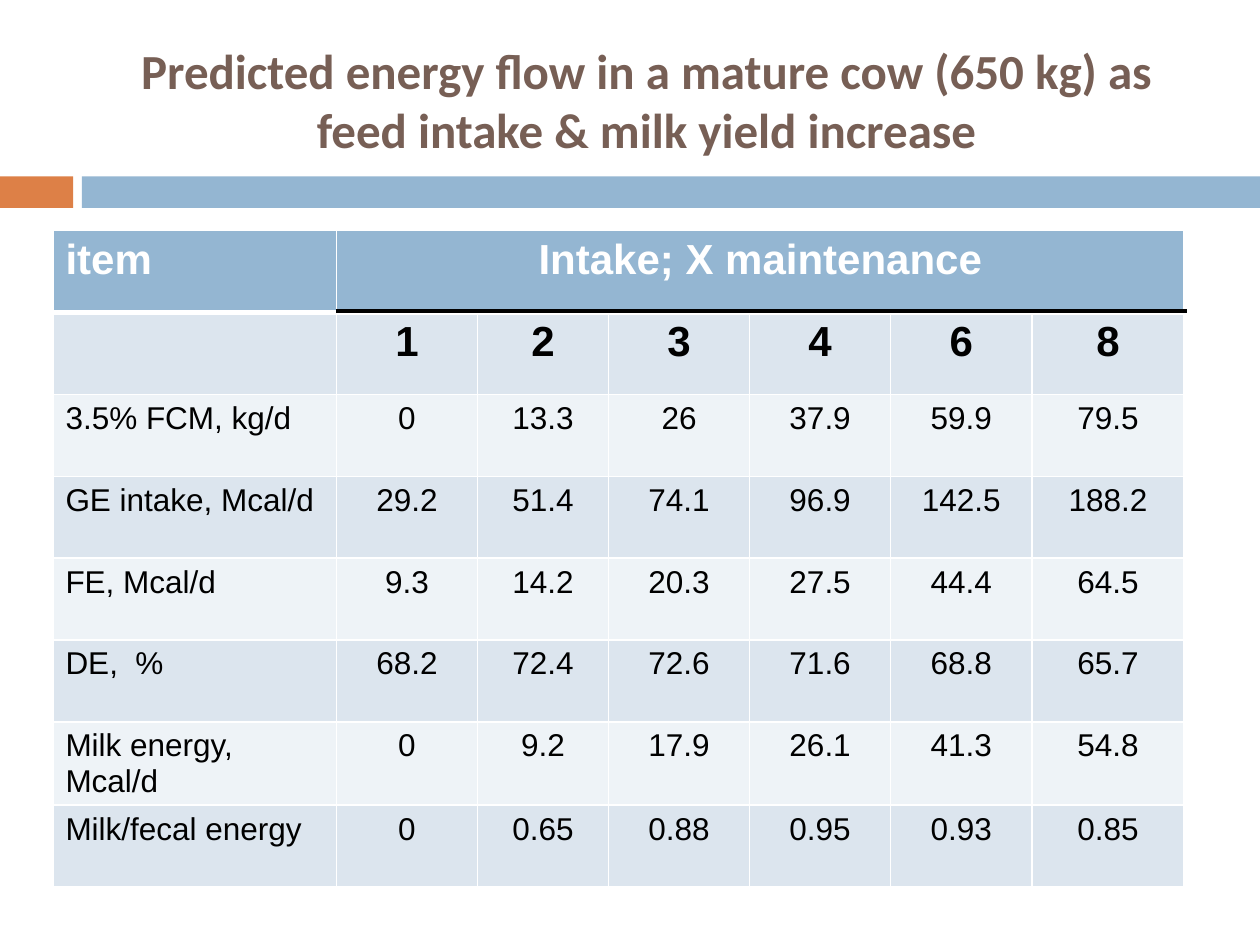
from lxml.etree import SubElement
from pptx import Presentation
from pptx.dml.color import RGBColor
from pptx.enum.shapes import MSO_CONNECTOR as CONN, MSO_SHAPE as SHAPE
from pptx.enum.text import MSO_ANCHOR as ANCHOR, PP_ALIGN as ALIGN
from pptx.oxml.ns import qn
from pptx.util import Inches, Pt

BLUE, ORANGE, BROWN = "94B6D2", "DD8047", "775F55"
WHITE, BLACK = "FFFFFF", "000000"
BANDS = ["DCE5EE", "EEF3F7"]
COL_WIDTHS = [2.25, 1.12, 1.04, 1.12, 1.12, 1.12, 1.21]
ROW_HEIGHT = 0.65
ROWS = [
    ["item", "Intake; X maintenance", "", "", "", "", ""],
    ["", "1", "2", "3", "4", "6", "8"],
    ["3.5% FCM, kg/d", "0", "13.3", "26", "37.9", "59.9", "79.5"],
    ["GE intake, Mcal/d", "29.2", "51.4", "74.1", "96.9", "142.5", "188.2"],
    ["FE, Mcal/d", "9.3", "14.2", "20.3", "27.5", "44.4", "64.5"],
    ["DE,  %", "68.2", "72.4", "72.6", "71.6", "68.8", "65.7"],
    ["Milk energy, Mcal/d", "0", "9.2", "17.9", "26.1", "41.3", "54.8"],
    ["Milk/fecal energy", "0", "0.65", "0.88", "0.95", "0.93", "0.85"],
]


def rgb(color):
    return RGBColor.from_string(color)


def format_text(tf, align, font, size, color, bold):
    for p in tf.paragraphs:
        p.alignment = align
        for r in p.runs:
            r.font.name = font
            r.font.size = Pt(size)
            r.font.bold = bold
            r.font.color.rgb = rgb(color)


def add_title(s, text):
    sp = s.shapes.title
    sp.left, sp.top = Inches(0.67), Inches(0.25)
    sp.width, sp.height = Inches(8.92), Inches(1.08)
    tf = sp.text_frame
    tf.text = text
    tf.word_wrap = True
    tf.vertical_anchor = ANCHOR.MIDDLE
    format_text(tf, ALIGN.CENTER, "Calibri", 28, BROWN, True)


def add_bar(s, left, width, color):
    sp = s.shapes.add_shape(SHAPE.RECTANGLE, Inches(left), Inches(1.4),
                            Inches(width), Inches(0.25))
    sp.shadow.inherit = False
    sp.fill.solid()
    sp.fill.fore_color.rgb = rgb(color)
    sp.line.fill.background()


def set_borders(cell, top, bottom):
    tc_pr = cell._tc.get_or_add_tcPr()
    for side, width in (("L", 1), ("R", 1), ("T", top), ("B", bottom)):
        ln = SubElement(tc_pr, qn(f"a:ln{side}"), w=str(Pt(width)))
        fill = SubElement(ln, qn("a:solidFill"))
        SubElement(fill, qn("a:srgbClr"), val=WHITE)


def format_cell(cell, row, col):
    set_borders(cell, 3 if row == 1 else 1, 3 if row == 0 else 1)
    cell.fill.solid()
    cell.fill.fore_color.rgb = rgb(BLUE if row == 0 else BANDS[(row - 1) % 2])
    heading = row < 2
    format_text(cell.text_frame, ALIGN.CENTER if col else ALIGN.LEFT, "Arial",
                24 if heading else 18, BLACK if row else WHITE, heading)


def add_energy_table(s):
    frame = s.shapes.add_table(len(ROWS), len(COL_WIDTHS), Inches(0.42), Inches(1.83),
                               Inches(sum(COL_WIDTHS)), Inches(ROW_HEIGHT * len(ROWS)))
    table = frame.table
    for column, width in zip(table.columns, COL_WIDTHS):
        column.width = Inches(width)
    for row in table.rows:
        row.height = Inches(ROW_HEIGHT)
    for i, values in enumerate(ROWS):
        for j, value in enumerate(values):
            cell = table.cell(i, j)
            cell.text_frame.text = value
            format_cell(cell, i, j)
    table.cell(0, 1).merge(table.cell(0, len(COL_WIDTHS) - 1))


def add_rule(s, left, right, y):
    line = s.shapes.add_connector(CONN.STRAIGHT, Inches(left), Inches(y),
                                  Inches(right), Inches(y))
    line.line.color.rgb = rgb(BLACK)
    line.line.width = Pt(2)
    SubElement(line._element.spPr, qn("a:effectLst"))


def main():
    prs = Presentation()
    prs.slide_width, prs.slide_height = Inches(10), Inches(7.5)
    s = prs.slides.add_slide(prs.slide_layouts[5])
    add_bar(s, 0, 0.58, ORANGE)
    add_bar(s, 0.65, 9.35, BLUE)
    add_title(s, "Predicted energy flow in a mature cow (650 kg) as "
                 "feed intake & milk yield increase")
    add_energy_table(s)
    add_rule(s, 2.67, 9.42, 2.47)
    prs.save("out.pptx")


if __name__ == "__main__":
    main()
